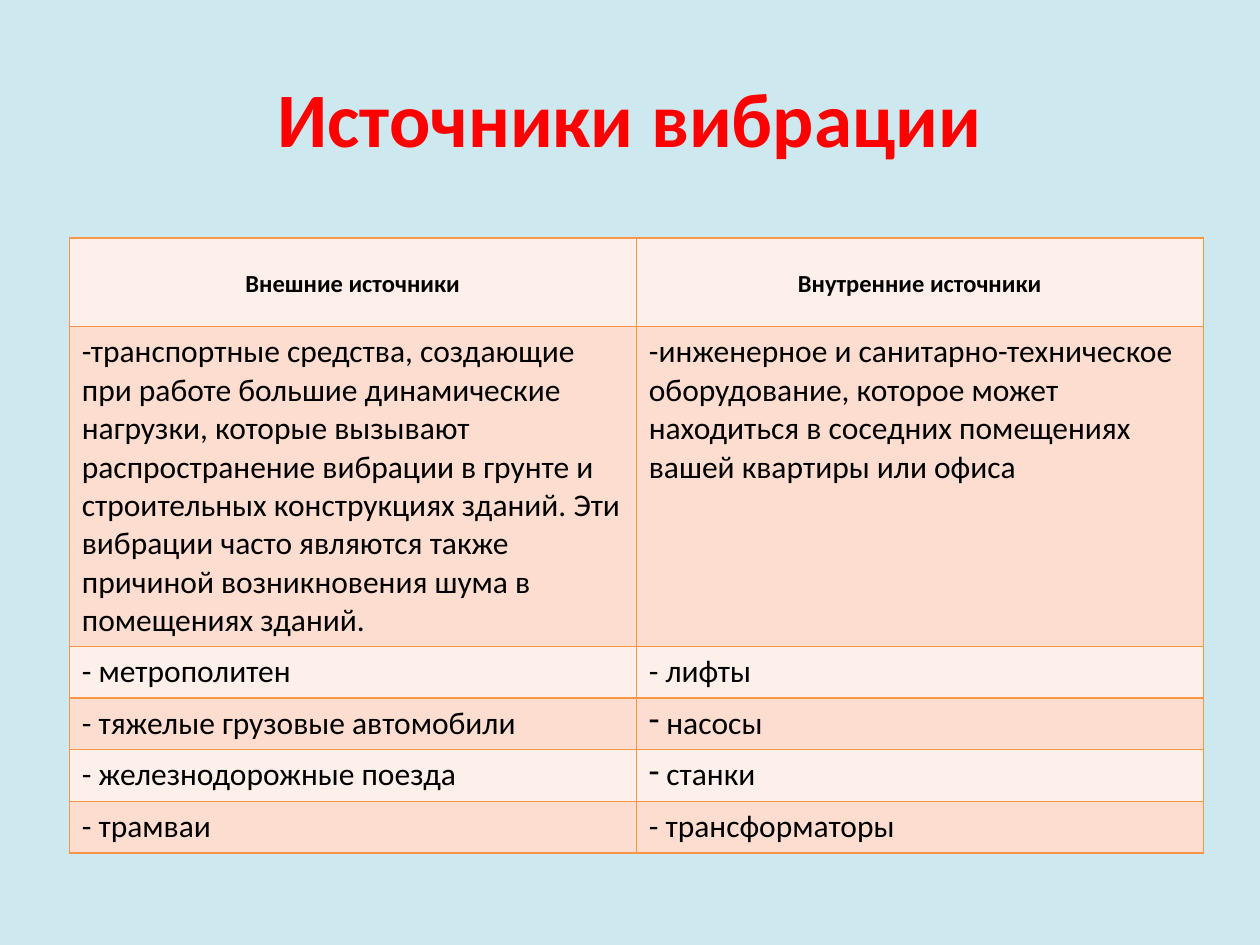
from lxml.etree import SubElement
from pptx import Presentation
from pptx.dml.color import RGBColor
from pptx.enum.text import MSO_ANCHOR, PP_ALIGN
from pptx.oxml import parse_xml
from pptx.oxml.ns import nsdecls, qn
from pptx.util import Inches, Pt


def color(value):
    return RGBColor.from_string(value)


def write(tf, text, size=18, fill="000000", bold=False, align=PP_ALIGN.LEFT):
    p = tf.paragraphs[0]
    p.alignment = align
    r = p.add_run()
    r.text = text
    r.font.name = "Calibri"
    r.font.size = Pt(size)
    r.font.bold = bold
    r.font.color.rgb = color(fill)
    return p


prs = Presentation()
prs.slide_width = Inches(10)
prs.slide_height = Inches(7.5)
s = prs.slides.add_slide(prs.slide_layouts[6])
s.background.fill.solid()
s.background.fill.fore_color.rgb = color("CEE8EF")

title = s.shapes.add_textbox(Inches(0.5), Inches(0.3), Inches(9), Inches(1.25))
tf = title.text_frame
tf.word_wrap = True
tf.vertical_anchor = MSO_ANCHOR.MIDDLE
write(tf, "Источники вибрации", size=44, fill="FF0000", bold=True, align=PP_ALIGN.CENTER)

rows = [
    ("Внешние источники", "Внутренние источники"),
    ("-транспортные средства, создающие при работе большие динамические нагрузки, "
     "которые вызывают распространение вибрации в грунте и строительных конструкциях "
     "зданий. Эти вибрации часто являются также причиной возникновения шума в "
     "помещениях зданий.",
     "-инженерное и санитарно-техническое оборудование, которое может находиться "
     "в соседних помещениях вашей квартиры или офиса"),
    ("- метрополитен", "- лифты"),
    ("- тяжелые грузовые автомобили", " насосы"),
    ("- железнодорожные поезда", " станки"),
    ("- трамваи", "- трансформаторы"),
]
heights = [0.7, 2.54] + [0.41] * 4

table = s.shapes.add_table(len(rows), 2, Inches(0.55), Inches(1.89),
                           Inches(9), Inches(sum(heights))).table
for col in table.columns:
    col.width = Inches(4.5)

for i, (texts, height) in enumerate(zip(rows, heights)):
    table.rows[i].height = Inches(height)
    for j, text in enumerate(texts):
        cell = table.cell(i, j)
        cell.fill.solid()
        cell.fill.fore_color.rgb = color("FCDDCF" if i % 2 else "FDEFE9")
        tcPr = cell._tc.get_or_add_tcPr()
        for k, side in enumerate(("lnL", "lnR", "lnT", "lnB")):
            tcPr.insert(k, parse_xml(
                f'<a:{side} {nsdecls("a")} w="12700"><a:solidFill>'
                f'<a:srgbClr val="F79646"/></a:solidFill></a:{side}>'))
        if i == 0:
            cell.vertical_anchor = MSO_ANCHOR.MIDDLE
            cell.margin_left = cell.margin_right = Inches(0.07)
            cell.margin_top = cell.margin_bottom = 0
            p = write(cell.text_frame, text, size=14, bold=True, align=PP_ALIGN.CENTER)
            p.line_spacing = 1.15
            p.space_after = Pt(10)
        else:
            p = write(cell.text_frame, text)
        if text.startswith(" "):
            pPr = p._p.get_or_add_pPr()
            pPr.set("marL", "0")
            pPr.set("indent", "0")
            SubElement(pPr, qn("a:buChar")).set("char", "-")

prs.save("out.pptx")
